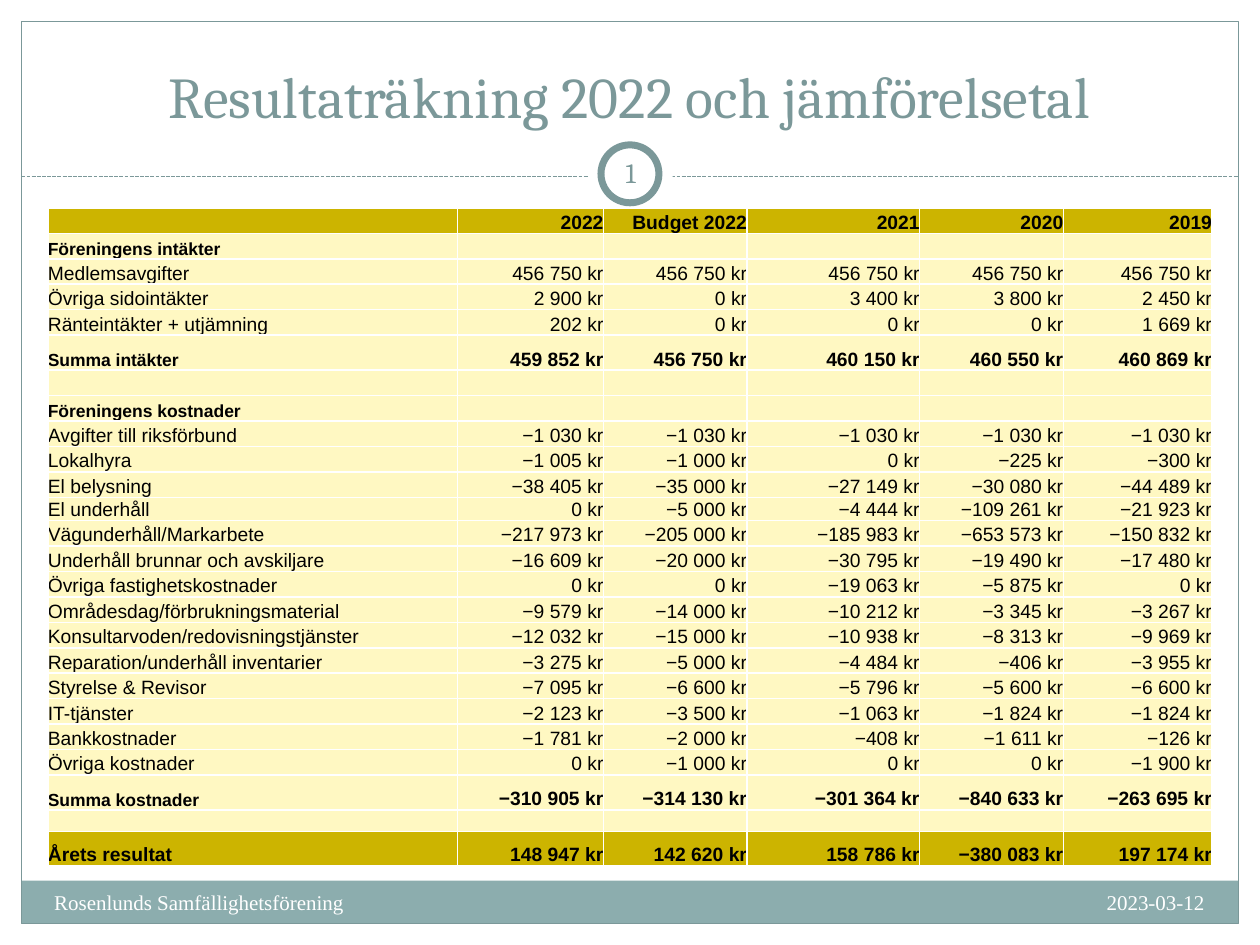
from lxml.etree import SubElement
from pptx import Presentation
from pptx.dml.color import RGBColor
from pptx.enum.dml import MSO_LINE
from pptx.enum.shapes import MSO_CONNECTOR, MSO_SHAPE
from pptx.enum.text import MSO_ANCHOR, PP_ALIGN
from pptx.oxml.ns import qn
from pptx.util import Inches, Pt

WHITE, TEAL, BAND, GOLD, CREAM, BLACK = "FFFFFF", "7B9899", "8CADAE", "CCB400", "FFF8C2", "000000"
WIDTH, HEIGHT, MARGIN, RULE_Y = 10, 7.5, 0.17, 1.4
TITLE = "Resultaträkning 2022 och jämförelsetal"
COLUMN_WIDTHS = [3.25, 1.16, 1.14, 1.37, 1.14, 1.18]
YEARS = ["2022", "Budget 2022", "2021", "2020", "2019"]
INCOME = [
    ("Medlemsavgifter", 456750, 456750, 456750, 456750, 456750),
    ("Övriga sidointäkter", 2900, 0, 3400, 3800, 2450),
    ("Ränteintäkter + utjämning", 202, 0, 0, 0, 1669),
]
COSTS = [
    ("Avgifter till riksförbund", -1030, -1030, -1030, -1030, -1030),
    ("Lokalhyra", -1005, -1000, 0, -225, -300),
    ("El belysning", -38405, -35000, -27149, -30080, -44489),
    ("El underhåll", 0, -5000, -4444, -109261, -21923),
    ("Vägunderhåll/Markarbete", -217973, -205000, -185983, -653573, -150832),
    ("Underhåll brunnar och avskiljare", -16609, -20000, -30795, -19490, -17480),
    ("Övriga fastighetskostnader", 0, 0, -19063, -5875, 0),
    ("Områdesdag/förbrukningsmaterial", -9579, -14000, -10212, -3345, -3267),
    ("Konsultarvoden/redovisningstjänster", -12032, -15000, -10938, -8313, -9969),
    ("Reparation/underhåll inventarier", -3275, -5000, -4484, -406, -3955),
    ("Styrelse & Revisor", -7095, -6600, -5796, -5600, -6600),
    ("IT-tjänster", -2123, -3500, -1063, -1824, -1824),
    ("Bankkostnader", -1781, -2000, -408, -1611, -126),
    ("Övriga kostnader", 0, -1000, 0, 0, -1900),
]
INCOME_TOTAL = ("Summa intäkter", 459852, 456750, 460150, 460550, 460869)
COST_TOTAL = ("Summa kostnader", -310905, -314130, -301364, -840633, -263695)
RESULT = ("Årets resultat", 148947, 142620, 158786, -380083, 197174)
ROW_STYLES = {
    "header": {"height": 14.57, "fill": GOLD, "bold": True, "label_size": 11},
    "section": {"height": 14.57, "fill": CREAM, "bold": True, "label_size": 10},
    "item": {"height": 14.57, "fill": CREAM, "bold": False, "label_size": 11},
    "total": {"height": 20, "fill": CREAM, "bold": True, "label_size": 10},
    "gap": {"height": 14.57, "fill": CREAM, "bold": False, "label_size": 8},
    "result": {"height": 19.6, "fill": GOLD, "bold": True, "label_size": 11},
}
LOW_ROWS = {"El underhåll": 12.6}
LAST_GAP = 12.4
BLANK = [""] * len(YEARS)
ROWS = [
    ("header", ["", *YEARS]),
    ("section", ["Föreningens intäkter", *BLANK]),
    *[("item", row) for row in INCOME],
    ("total", INCOME_TOTAL),
    ("gap", ["", *BLANK]),
    ("section", ["Föreningens kostnader", *BLANK]),
    *[("item", row) for row in COSTS],
    ("total", COST_TOTAL),
    ("gap", ["", *BLANK]),
    ("result", RESULT),
]
PANELS = [
    ((0, 0, WIDTH, 1.52), MSO_SHAPE.RECTANGLE, WHITE, None),
    ((0, 0, MARGIN, HEIGHT), MSO_SHAPE.RECTANGLE, WHITE, None),
    ((WIDTH - MARGIN, 0, MARGIN, HEIGHT), MSO_SHAPE.RECTANGLE, WHITE, None),
    ((MARGIN, 6.99, WIDTH - 2 * MARGIN, 0.34), MSO_SHAPE.RECTANGLE, BAND, None),
    ((MARGIN, MARGIN, WIDTH - 2 * MARGIN, HEIGHT - 2 * MARGIN), MSO_SHAPE.RECTANGLE, None, 0.75),
]
BADGE = [
    ((4.67, 1.05, 0.67, 0.67), MSO_SHAPE.OVAL, WHITE, None),
    ((4.77, 1.15, 0.46, 0.46), MSO_SHAPE.OVAL, WHITE, 4),
]
FOOTERS = [
    ("Rosenlunds Samfällighetsförening", (0.38, 7.01, 3.82, 0.3), PP_ALIGN.LEFT),
    ("2023-03-12", (6.38, 7.01, 3.23, 0.3), PP_ALIGN.RIGHT),
]


def color(value):
    """Turn a hex string into a colour."""
    return RGBColor.from_string(value)


def set_values(target, values):
    """Set every attribute named in a dict."""
    for name, value in values.items():
        setattr(target, name, value)


def write(frame, text, size, font, ink, align, bold=False):
    """Write one formatted paragraph."""
    paragraph = frame.paragraphs[0]
    paragraph.alignment = align
    if not text:
        paragraph._p.get_or_add_endParaRPr().set("sz", str(size * 100))
        return
    run = paragraph.add_run()
    run.text = text
    set_values(run.font, {"size": Pt(size), "name": font, "bold": bold})
    run.font.color.rgb = color(ink)


def inset(frame, anchor, wrap=True):
    """Give a text frame equal insets and an anchor."""
    sides = ("left", "top", "right", "bottom")
    set_values(frame, {f"margin_{side}": Inches(0.05) for side in sides})
    set_values(frame, {"vertical_anchor": anchor, "word_wrap": wrap})


def add_panel(slide, box, kind, fill, line_width):
    """Draw a flat shape with an optional fill and outline."""
    shape = slide.shapes.add_shape(kind, *map(Inches, box))
    shape.shadow.inherit = False
    if fill:
        shape.fill.solid()
        shape.fill.fore_color.rgb = color(fill)
    else:
        shape.fill.background()
    if line_width:
        shape.line.color.rgb = color(TEAL)
        shape.line.width = Pt(line_width)
    else:
        shape.line.fill.background()


def add_rule(slide):
    """Draw the dashed rule under the title."""
    rule = slide.shapes.add_connector(
        MSO_CONNECTOR.STRAIGHT, *map(Inches, (MARGIN, RULE_Y, WIDTH - MARGIN, RULE_Y)))
    set_values(rule.line, {"width": Pt(0.75), "dash_style": MSO_LINE.SQUARE_DOT})
    rule.line.color.rgb = color(TEAL)
    SubElement(rule._element.spPr, qn("a:effectLst"))


def add_label(slide, text, box, size, font, ink, align, anchor, wrap=True):
    """Add a text box with one line."""
    frame = slide.shapes.add_textbox(*map(Inches, box)).text_frame
    inset(frame, anchor, wrap)
    write(frame, text, size, font, ink, align)


def set_borders(cell):
    """Draw white borders around a cell."""
    properties = cell._tc.get_or_add_tcPr()
    for position, side in enumerate(("lnL", "lnR", "lnT", "lnB")):
        line = properties.makeelement(qn(f"a:{side}"), {"w": str(Pt(1))})
        fill = SubElement(line, qn("a:solidFill"))
        SubElement(fill, qn("a:srgbClr"), val=WHITE)
        properties.insert(position, line)


def amount(value):
    """Format kronor with fixed spaces and a true minus."""
    if isinstance(value, str):
        return value
    return f"{value:,} kr".replace(",", " ").replace(" ", chr(160)).replace("-", "−")


def add_statement(slide):
    """Build the income statement table."""
    heights = [LOW_ROWS.get(row[0], ROW_STYLES[kind]["height"]) for kind, row in ROWS]
    heights[-2] = LAST_GAP
    table = slide.shapes.add_table(
        len(ROWS), len(COLUMN_WIDTHS), Inches(0.38), Inches(1.65),
        Inches(sum(COLUMN_WIDTHS)), Pt(sum(heights))).table
    for column, width in zip(table.columns, COLUMN_WIDTHS):
        column.width = Inches(width)
    for table_row, height, (kind, row) in zip(table.rows, heights, ROWS):
        table_row.height = Pt(height)
        style = ROW_STYLES[kind]
        for index, (cell, value) in enumerate(zip(table_row.cells, row)):
            sides = ("left", "top", "right", "bottom")
            set_values(cell, {f"margin_{side}": 0 for side in sides})
            cell.vertical_anchor = MSO_ANCHOR.BOTTOM
            cell.fill.solid()
            cell.fill.fore_color.rgb = color(style["fill"])
            set_borders(cell)
            size = 11 if index and value != "" else style["label_size"]
            align = PP_ALIGN.RIGHT if index else PP_ALIGN.LEFT
            write(cell.text_frame, amount(value), size, "Arial", BLACK, align, style["bold"])


def main():
    """Build and save the slide."""
    presentation = Presentation()
    set_values(presentation, {"slide_width": Inches(WIDTH), "slide_height": Inches(HEIGHT)})
    slide = presentation.slides.add_slide(presentation.slide_layouts[5])
    title = slide.shapes.title
    for panel in PANELS:
        add_panel(slide, *panel)
    add_rule(slide)
    for ring in BADGE:
        add_panel(slide, *ring)
    title.element.getparent().append(title.element)
    box = dict(zip(("left", "top", "width", "height"), map(Inches, (0.33, 0.25, 9.33, 0.83))))
    set_values(title, box)
    inset(title.text_frame, MSO_ANCHOR.BOTTOM)
    write(title.text_frame, TITLE, 33, "Cambria", TEAL, PP_ALIGN.CENTER)
    add_label(slide, "1", (4.9, 1.19, 0.21, 0.36), 16, "Cambria", TEAL,
              PP_ALIGN.CENTER, MSO_ANCHOR.MIDDLE, False)
    add_statement(slide)
    for text, place, align in FOOTERS:
        add_label(slide, text, place, 12, "Times New Roman", WHITE, align, MSO_ANCHOR.TOP)
    presentation.save("out.pptx")


if __name__ == "__main__":
    main()
